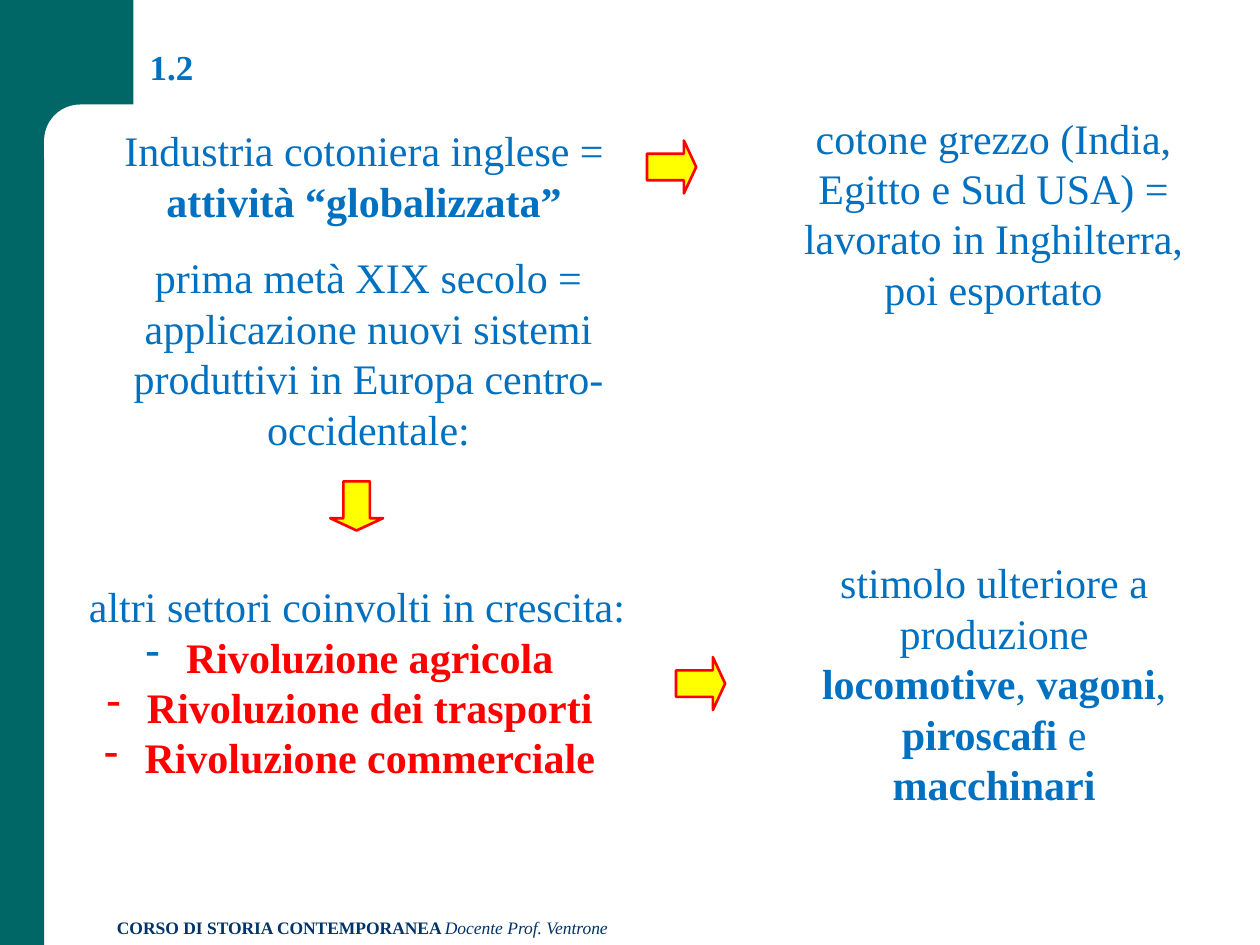
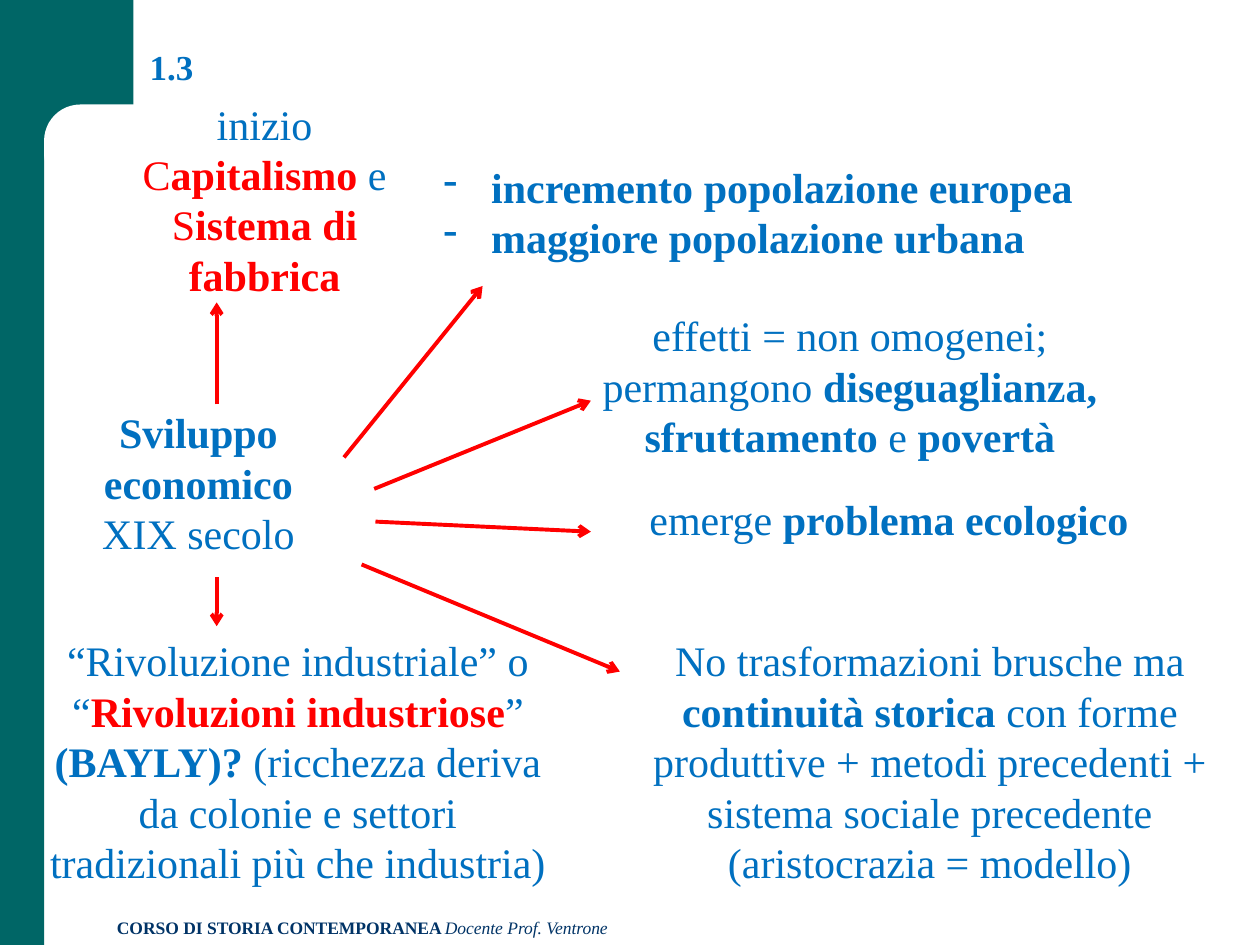
import pptx
import pptx.util
import pptx.dml.color
import pptx.enum.shapes
import pptx.enum.text
import pptx.oxml
import pptx.oxml.ns

PX = 9144
FONT = "Times New Roman"
LINE_SPACING = 1.2
COLORS = {
    "band": "006666",
    "paper": "FFFFFF",
    "text": "0070C0",
    "accent": "FF0000",
    "arrow": "FFFF00",
    "footer": "003366",
}
SHAPES = pptx.enum.shapes.MSO_SHAPE
ALIGN = pptx.enum.text.PP_ALIGN


def px(length):
    """Turn px (100 to the inch) into EMU."""
    return pptx.util.Emu(length * PX)


def color(name):
    """Look up a colour of the palette."""
    return pptx.dml.color.RGBColor.from_string(COLORS[name])


def add_block(slide, kind, box, fill):
    """Draw a filled preset shape without outline or shadow."""
    shape = slide.shapes.add_shape(kind, *map(px, box))
    shape.shadow.inherit = False
    shape.fill.solid()
    shape.fill.fore_color.rgb = color(fill)
    shape.line.fill.background()
    return shape


def set_bullet(paragraph, bullet_color, margin, hanging):
    """Give a paragraph a hanging dash."""
    properties = paragraph._p.get_or_add_pPr()
    properties.set("marL", str(px(margin)))
    properties.set("indent", str(px(-hanging)))
    namespace = pptx.oxml.ns.nsdecls("a")
    for xml in (
        f'<a:buClr {namespace}><a:srgbClr val="{COLORS[bullet_color]}"/></a:buClr>',
        f"<a:buFontTx {namespace}/>",
        f'<a:buChar {namespace} char="-"/>',
    ):
        properties.append(pptx.oxml.parse_xml(xml))


def fill_paragraph(paragraph, pieces, size, align, base_color):
    """Write (text, marks) pieces; marks are b bold, i italic, r red."""
    paragraph.alignment = align
    paragraph.line_spacing = pptx.util.Pt(size * LINE_SPACING)
    for text, marks in pieces:
        run = paragraph.add_run()
        run.text = text
        run.font.name = FONT
        run.font.size = pptx.util.Pt(size)
        run.font.bold = "b" in marks
        run.font.italic = "i" in marks
        run.font.color.rgb = color("accent" if "r" in marks else base_color)


def add_text(slide, box, paragraphs, size=24, align=ALIGN.CENTER,
             base_color="text", bullets=None):
    """Place a wrapped text box; bullets maps paragraph index to its dash."""
    frame = slide.shapes.add_textbox(*map(px, box)).text_frame
    frame.word_wrap = True
    frame.auto_size = pptx.enum.text.MSO_AUTO_SIZE.SHAPE_TO_FIT_TEXT
    for index, pieces in enumerate(paragraphs):
        paragraph = frame.add_paragraph() if index else frame.paragraphs[0]
        if bullets and index in bullets:
            set_bullet(paragraph, *bullets[index])
        fill_paragraph(paragraph, pieces, size, align, base_color)


def add_block_arrow(slide, left, top, rotation=0):
    """Draw a yellow block arrow, pointing down unless rotated."""
    arrow = add_block(slide, SHAPES.DOWN_ARROW, (left, top, 42, 39), "arrow")
    arrow.adjustments[0] = 0.5
    arrow.adjustments[1] = 0.25
    arrow.line.color.rgb = color("accent")
    arrow.line.width = pptx.util.Pt(1.5)
    arrow.rotation = rotation


def add_line_arrow(slide, start, end):
    """Draw a red line with an open arrowhead at its end."""
    connector = slide.shapes.add_connector(
        pptx.enum.shapes.MSO_CONNECTOR.STRAIGHT, *map(px, start + end))
    connector.line.color.rgb = color("accent")
    connector.line.width = pptx.util.Pt(2.25)
    namespace = pptx.oxml.ns.nsdecls("a")
    connector.line._get_or_add_ln().append(
        pptx.oxml.parse_xml(f'<a:tailEnd {namespace} type="arrow"/>'))
    connector._element.spPr.append(
        pptx.oxml.parse_xml(f"<a:effectLst {namespace}/>"))


def add_lesson_slide(presentation, number):
    """Add a slide with the green corner, footer and section number."""
    slide = presentation.slides.add_slide(presentation.slide_layouts[6])
    add_block(slide, SHAPES.RECTANGLE, (0, 0, 35, 750), "band")
    add_block(slide, SHAPES.RECTANGLE, (0, 0, 106, 117), "band")
    corner = add_block(slide, SHAPES.ROUNDED_RECTANGLE, (35, 83, 606, 67), "paper")
    corner.adjustments[0] = 0.43
    add_text(slide, (83, 723, 617, 27),
             [[("CORSO DI STORIA CONTEMPORANEA ", "b"),
               ("Docente Prof. Ventrone", "i")]],
             size=10, align=ALIGN.LEFT, base_color="footer")
    add_text(slide, (109, 31, 63, 44), [[(number, "b")]], size=20, align=ALIGN.LEFT)
    return slide


def build_cotton_industry(presentation):
    """Build the slide on the cotton industry and the growing sectors."""
    slide = add_lesson_slide(presentation, "1.2")
    add_text(slide, (78, 94, 422, 91), [[
        ("Industria cotoniera inglese =", ""),
        (" attività “globalizzata”", "b")]])
    add_text(slide, (609, 84, 359, 172), [[
        ("cotone grezzo (India, Egitto e Sud USA) = lavorato in Inghilterra, "
         "poi esportato", "")]])
    add_text(slide, (62, 195, 461, 172), [[
        ("prima metà XIX secolo = applicazione nuovi sistemi produttivi in "
         "Europa centro-occidentale:", "")]])
    revolutions = ("agricola", "dei trasporti", "commerciale")
    dash = (20, 32)
    add_text(slide, (45, 456, 477, 172),
             [[("altri settori coinvolti in crescita:", "")]]
             + [[(f"Rivoluzione {name}", "br")] for name in revolutions],
             bullets={1: ("text", *dash), 2: ("accent", *dash), 3: ("accent", *dash)})
    add_text(slide, (629, 437, 320, 212), [[
        ("stimolo ulteriore a produzione ", ""), ("locomotive", "b"), (", ", ""),
        ("vagoni", "b"), (", ", ""), ("piroscafi", "b"), (" e ", ""),
        ("macchinari", "b")]])
    add_block_arrow(slide, 262, 382)
    add_block_arrow(slide, 512, 113, 270)
    add_block_arrow(slide, 535, 523, 270)


def build_economic_growth(presentation):
    """Build the slide on economic growth and its consequences."""
    slide = add_lesson_slide(presentation, "1.3")
    add_text(slide, (44, 318, 227, 131), [[
        ("Sviluppo economico", "b"), (" XIX secolo", "")]])
    add_text(slide, (77, 73, 266, 172), [[
        ("inizio ", ""), ("C", "r"), ("apitalismo", "br"), (" e ", ""),
        ("S", "r"), ("istema di fabbrica", "br")]])
    add_text(slide, (342, 123, 547, 91),
             [[("incremento popolazione europea", "b")],
              [("maggiore popolazione urbana", "b")]],
             align=ALIGN.JUSTIFY,
             bullets=dict.fromkeys(range(2), ("text", 38, 38)))
    add_text(slide, (452, 241, 445, 131), [[
        ("effetti = non omogenei; permangono ", ""),
        ("diseguaglianza, sfruttamento ", "b"), ("e", ""), (" povertà", "b")]])
    add_text(slide, (483, 387, 445, 50), [[
        ("emerge ", ""), ("problema ecologico", "b")]])
    add_text(slide, (469, 499, 538, 212), [[
        ("No trasformazioni brusche ma ", ""), ("continuità storica ", "b"),
        ("con forme produttive + metodi precedenti + sistema sociale "
         "precedente (aristocrazia = modello)", "")]])
    add_text(slide, (28, 499, 417, 212), [[
        ("“Rivoluzione industriale” o “", ""), ("Rivoluzioni industriose", "br"),
        ("” ", ""), ("(BAYLY)? ", "b"),
        ("(ricchezza deriva da colonie e settori tradizionali più che "
         "industria)", "")]])
    for start, end in (
        ((172, 321), (172, 240)),
        ((273, 363), (383, 227)),
        ((297, 388), (469, 318)),
        ((298, 414), (469, 422)),
        ((287, 448), (492, 533)),
        ((172, 458), (172, 497)),
    ):
        add_line_arrow(slide, start, end)


def main():
    """Build and save the presentation."""
    presentation = pptx.Presentation()
    presentation.slide_width = px(1000)
    presentation.slide_height = px(750)
    build_cotton_industry(presentation)
    build_economic_growth(presentation)
    presentation.save("out.pptx")


if __name__ == "__main__":
    main()
